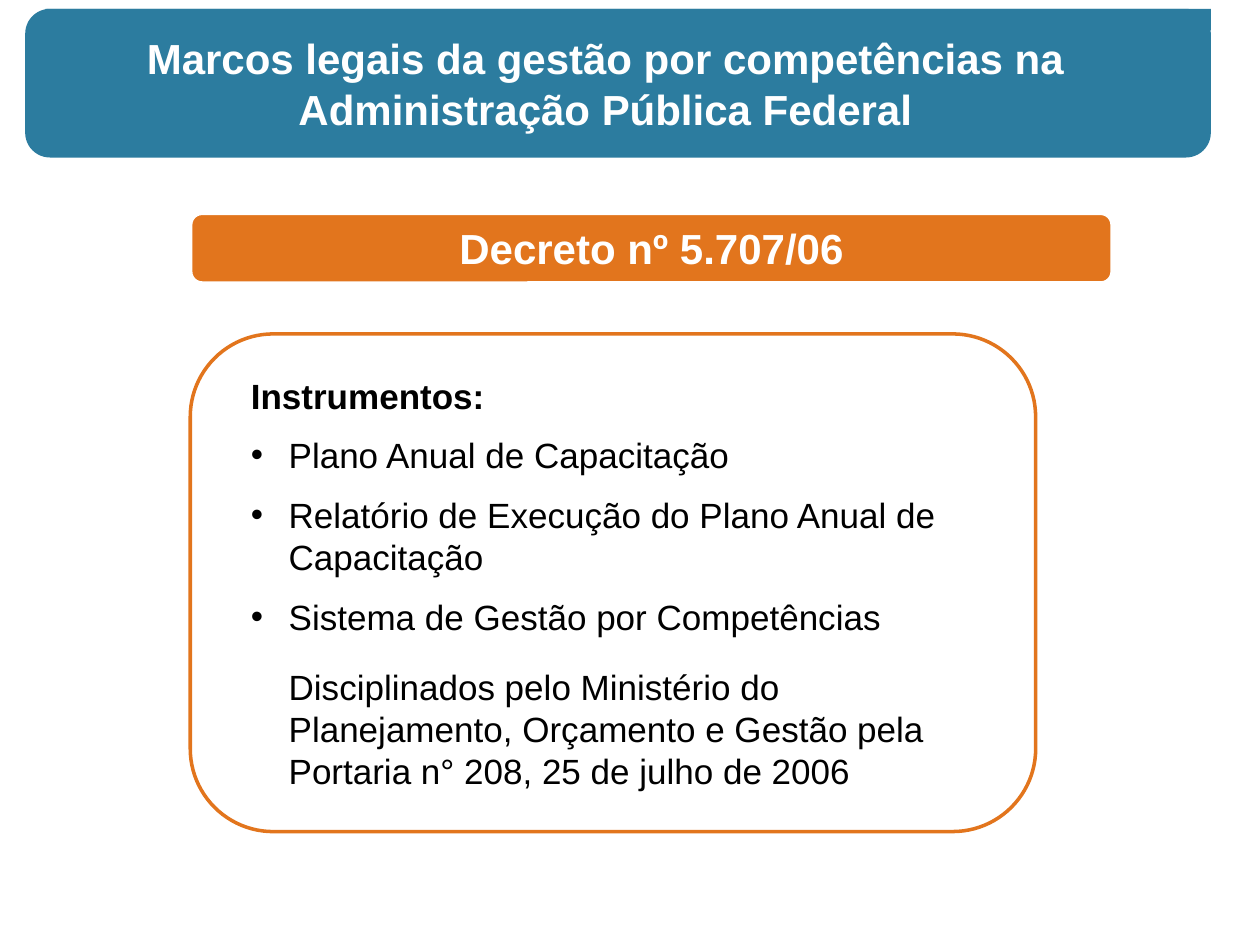
from lxml.etree import SubElement
from pptx import Presentation
from pptx.dml.color import RGBColor
from pptx.enum.shapes import MSO_SHAPE as Shape
from pptx.enum.text import MSO_ANCHOR as Anchor, PP_ALIGN as Align
from pptx.oxml.ns import qn
from pptx.util import Inches, Pt

# Slide grid: 100 columns by 75 rows
WIDTH, HEIGHT = Inches(10), Inches(7.5)
COLUMN, ROW = WIDTH / 100, HEIGHT / 75

FONT = "Arial"
BLUE, ORANGE, WHITE, BLACK = "2C7C9F", "E2751D", "FFFFFF", "000000"
HEADING_SIZE, BODY_SIZE = 24, 20
MARGIN, HANGING = Inches(0.49), Inches(0.3)

TITLE = "Marcos legais da gestão por competências na Administração Pública Federal"
DECREE = "Decreto nº 5.707/06"
LIST_HEADING = "Instrumentos:"
INSTRUMENTS = [
    "Plano Anual de Capacitação",
    "Relatório de Execução do Plano Anual de Capacitação",
    "Sistema de Gestão por Competências",
]
REGULATION = ("Disciplinados pelo Ministério do Planejamento, Orçamento e Gestão "
              "pela Portaria n° 208, 25 de julho de 2006")


def color(hex_value):
    return RGBColor.from_string(hex_value)


def cells(left, top, width, height):
    """Turn grid columns and rows into slide lengths."""
    return (round(left * COLUMN), round(top * ROW),
            round(width * COLUMN), round(height * ROW))


def add_panel(shapes, kind, area, fill, line=None, line_width=0):
    shape = shapes.add_shape(kind, *cells(*area))
    shape.shadow.inherit = False
    shape.fill.solid()
    shape.fill.fore_color.rgb = color(fill)
    if line:
        shape.line.color.rgb = color(line)
        shape.line.width = Pt(line_width)
    else:
        shape.line.fill.background()
    return shape


def add_run(paragraph, text, size, hex_value, bold=False):
    run = paragraph.add_run()
    run.text = text
    run.font.name = FONT
    run.font.size = Pt(size)
    run.font.bold = bold
    run.font.color.rgb = color(hex_value)


def add_heading(shape, text):
    frame = shape.text_frame
    frame.word_wrap = True
    paragraph = frame.paragraphs[0]
    paragraph.alignment = Align.CENTER
    add_run(paragraph, text, HEADING_SIZE, WHITE, bold=True)


def add_item(paragraph, text, hanging=HANGING, bullet=False, bold=False, gap=0.5):
    """Fill one list paragraph; gap is a share of the text size."""
    paragraph.alignment = Align.LEFT
    paragraph.space_after = Pt(BODY_SIZE * gap)
    properties = paragraph._p.get_or_add_pPr()
    properties.set("marL", str(MARGIN))
    properties.set("indent", str(-hanging))
    if bullet:
        SubElement(properties, qn("a:buFont"), typeface=FONT)
        SubElement(properties, qn("a:buChar"), char="•")
    else:
        SubElement(properties, qn("a:buNone"))
    add_run(paragraph, text, BODY_SIZE, BLACK, bold)


def add_banner(slide):
    group = slide.shapes.add_group_shape()
    add_panel(group.shapes, Shape.FLOWCHART_ALTERNATE_PROCESS,
              (2, 0.7, 94.1, 11.8), BLUE)
    add_panel(group.shapes, Shape.RECTANGLE, (3.6, 0.7, 92.5, 1.7), BLUE)
    add_heading(slide.shapes.add_textbox(*cells(5.9, 2.1, 84.3, 9.1)), TITLE)


def add_instruments(slide):
    box = add_panel(slide.shapes, Shape.ROUNDED_RECTANGLE,
                    (15.1, 26.5, 67.1, 39.5), WHITE, ORANGE, 2)
    frame = box.text_frame
    frame.word_wrap = True
    frame.vertical_anchor = Anchor.MIDDLE
    add_item(frame.paragraphs[0], LIST_HEADING, bold=True)
    for text in INSTRUMENTS:
        gap = 0.8 if text == INSTRUMENTS[-1] else 0.5
        add_item(frame.add_paragraph(), text, bullet=True, gap=gap)
    add_item(frame.add_paragraph(), REGULATION, hanging=0)


def main():
    presentation = Presentation()
    presentation.slide_width, presentation.slide_height = WIDTH, HEIGHT
    slide = presentation.slides.add_slide(presentation.slide_layouts[6])

    # Title banner
    add_banner(slide)

    # Decree bar
    decree = add_panel(slide.shapes, Shape.ROUNDED_RECTANGLE,
                       (15.1, 16.9, 73.2, 5.6), ORANGE, WHITE, 2.5)
    add_heading(decree, DECREE)

    # Instruments box
    add_instruments(slide)

    presentation.save("out.pptx")


if __name__ == "__main__":
    main()
